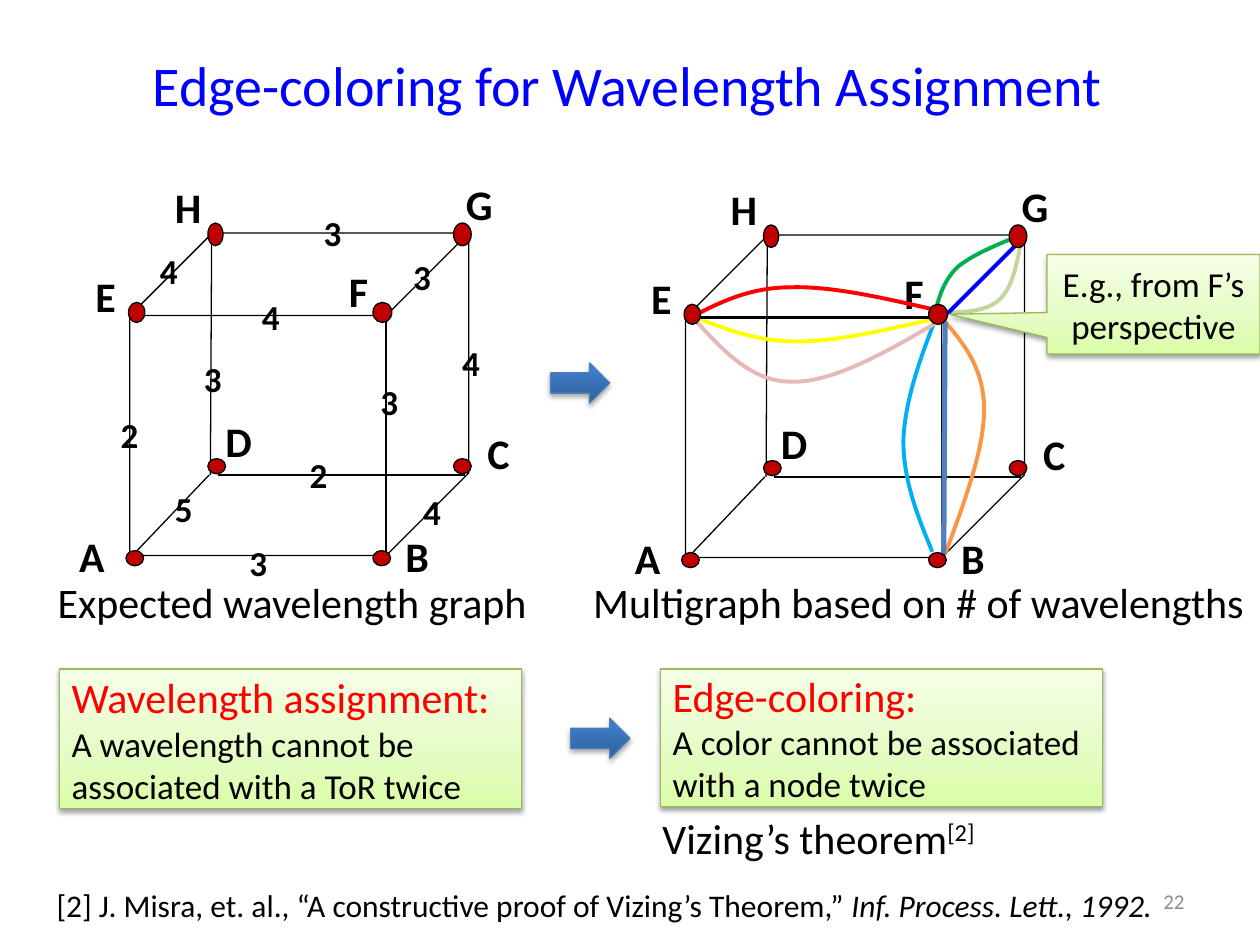
from copy import deepcopy
from dataclasses import dataclass
from itertools import pairwise

from lxml.etree import SubElement
from pptx import Presentation
from pptx.dml.color import RGBColor as RGB
from pptx.enum.shapes import MSO_CONNECTOR as Conn, MSO_SHAPE as Shape
from pptx.enum.text import MSO_ANCHOR as Anchor, PP_ALIGN as Align
from pptx.oxml.ns import qn
from pptx.util import Inches, Pt

COLS, ROWS = 100, 75
W, H = Inches(10), Inches(7.5)
FONT = "Calibri"
COLORS = {
    "black": "000000", "title": "0000FF", "gray": "8C8C8C", "node": "C00000",
    "red": "FF0000", "green": "00B050", "olive": "C3D69B", "cyan": "00B0F0",
    "orange": "F79646", "yellow": "FFFF00", "pink": "E6B9B8", "blue": "0000FF",
    "steel": "4F81BD", "box_line": "98B955", "arrow_line": "4B7EBC",
}


@dataclass(frozen=True)
class Node:
    name: str
    x: float
    y: float
    w: float
    h: float
    label_x: float
    label_y: float


@dataclass(frozen=True)
class Edge:
    color: str
    points: tuple
    width: float = 2.25


@dataclass(frozen=True)
class Style:
    stops: tuple
    line: str
    opacity: int
    distance: float


NODES = (
    Node("A", 10, 43.7, 1.4, 1.2, 5.3, 41.6),
    Node("B", 29.6, 43.7, 1.4, 1.2, 31.2, 41.6),
    Node("C", 36, 36.4, 1.4, 1.2, 37.7, 33.4),
    Node("D", 16.5, 36.4, 1.4, 1.2, 16.9, 32.5),
    Node("E", 10.2, 24, 1.3, 1.6, 6.6, 21),
    Node("F", 29.6, 24, 1.5, 1.6, 26.7, 20.6),
    Node("G", 36, 17.7, 1.4, 1.8, 36, 13.7),
    Node("H", 16.5, 17.7, 1.2, 1.8, 12.9, 13.9),
)
HIDDEN_EDGES = (
    Edge("black", ((16.8, 18.5), (16.7, 37.7)), 0.75),
    Edge("black", ((10.5, 44.1), (16.6, 37.7)), 0.75),
    Edge("black", ((17.3, 37.7), (36.9, 37.7)), 0.75),
)
WEIGHTS = (
    ("4", 19.8, 23), ("3", 29.2, 29.7), ("3", 31.8, 19.8), ("3", 18.8, 42.5),
    ("5", 12.9, 38.2), ("2", 8.6, 32.3), ("4", 32.6, 38.4), ("2", 23.6, 35.5),
    ("4", 35.7, 26.6), ("3", 15.2, 27.9), ("4", 11.7, 19.3), ("3", 24.7, 16.3),
)
MULTI_EDGES = (
    Edge("green", ((74.3, 24.5), (74.6, 23.3), (75, 22.2), (76, 21.2),
                   (77.1, 20.3), (78.9, 19.5), (80.7, 18.8))),
    Edge("olive", ((74.8, 24.8), (76.6, 24.8), (78.3, 24.7), (79.3, 23.8),
                   (80.3, 22.9), (80.7, 21.1), (81, 19.3))),
    Edge("cyan", ((74.3, 25.2), (73, 28.5), (71.8, 31.9), (71.7, 35),
                  (71.7, 38.1), (72.8, 40.9), (74, 43.8))),
    Edge("orange", ((74.7, 25.2), (76.4, 27.1), (78, 29.1), (78.1, 32.2),
                    (78.2, 35.4), (76.6, 39.7), (75, 44))),
    Edge("red", ((54.8, 25.2), (57.1, 24), (59.5, 22.8), (62.8, 22.8),
                 (66.1, 22.7), (70.4, 23.7), (74.7, 24.7))),
    Edge("yellow", ((55.2, 25.2), (57.6, 26.1), (60, 27.1), (63.3, 27.1),
                    (66.5, 27.1), (70.6, 26.1), (74.7, 25.2))),
    Edge("pink", ((54.8, 25), (57.2, 27.6), (59.5, 30.3), (62.8, 30.3),
                  (66, 30.4), (70.3, 28), (74.5, 25.5))),
    Edge("black", ((55.2, 25.2), (74.7, 25.2))),
    Edge("blue", ((80.7, 19.4), (75.2, 24.9))),
    Edge("steel", ((75, 25.5), (74.9, 44)), 3),
)
BOX = Style(((0, "DAFDA7"), (0.35, "E4FCC2"), (1, "F5FFE7")), "box_line", 38, 1.6)
ARROW = Style(((0, "2F5F99"), (0.8, "3D7CC7"), (1, "3A7CCB")), "arrow_line", 35, 1.8)


def col(n: float) -> int:
    return round(W * n / COLS)


def row(n: float) -> int:
    return round(H * n / ROWS)


def rgb(name: str) -> RGB:
    return RGB.from_string(COLORS[name])


def write(p, text: str, *, size=24, color="black", bold=False, italic=False, baseline=0) -> None:
    r = p.add_run()
    r.text = text
    f = r.font
    f.name, f.size, f.bold, f.italic = FONT, Pt(size), bold, italic
    f.color.rgb = rgb(color)
    if baseline:
        r._r.get_or_add_rPr().set("baseline", str(baseline * 1000))


def fill_text(sp, *paras: list, align=Align.LEFT, anchor=Anchor.TOP) -> None:
    tf = sp.text_frame
    tf.word_wrap = True
    tf.vertical_anchor = anchor
    for i, runs in enumerate(paras):
        p = tf.add_paragraph() if i else tf.paragraphs[0]
        p.alignment = align
        for text, fmt in runs:
            write(p, text, **fmt)


def text_box(s, x: float, y: float, w: float, h: float, *runs: tuple, **layout) -> None:
    sp = s.shapes.add_textbox(col(x), row(y), col(w), row(h))
    fill_text(sp, list(runs), **layout)


def outlined(s, kind, x: float, y: float, w: float, h: float, fill: str | None = None):
    sp = s.shapes.add_shape(kind, col(x), row(y), col(w), row(h))
    sp.shadow.inherit = False
    if fill:
        sp.fill.solid()
        sp.fill.fore_color.rgb = rgb(fill)
    else:
        sp.fill.background()
    sp.line.color.rgb = rgb("black")
    sp.line.width = Pt(0.75)
    return sp


def shaded(s, kind, x: float, y: float, w: float, h: float, style: Style):
    sp = outlined(s, kind, x, y, w, h)
    sp.line.color.rgb = rgb(style.line)
    sp.fill.gradient()
    sp.fill.gradient_angle = 90
    stop_list = sp._element.spPr.find(f".//{qn('a:gsLst')}")
    stop_list.append(deepcopy(stop_list[0]))
    for stop, (position, color) in zip(sp.fill.gradient_stops, style.stops):
        stop.position = position
        stop.color.rgb = RGB.from_string(color)
    effects = sp._element.spPr.find(qn("a:effectLst"))
    shadow = SubElement(effects, qn("a:outerShdw"), blurRad=str(Pt(3.1)),
                        dist=str(Pt(style.distance)), dir="5400000", rotWithShape="0")
    black = SubElement(shadow, qn("a:srgbClr"), val=COLORS["black"])
    SubElement(black, qn("a:alpha"), val=str(style.opacity * 1000))
    return sp


def draw_edge(s, edge: Edge, dx: float = 0, dy: float = 0) -> None:
    pts = [(col(x + dx), row(y + dy)) for x, y in edge.points]
    if len(pts) == 2:
        sp = s.shapes.add_connector(Conn.STRAIGHT, *pts[0], *pts[1])
        SubElement(sp._element.spPr, qn("a:effectLst"))
    else:
        builder = s.shapes.build_freeform(*pts[0])
        builder.add_line_segments(pts[1:], close=False)
        sp = builder.convert_to_shape()
        sp.shadow.inherit = False
        sp.fill.background()
        outline = sp._element.spPr.find(f".//{qn('a:path')}")
        segments = outline.findall(qn("a:lnTo"))
        for start, end in pairwise(range(0, len(segments) + 1, 3)):
            curve = SubElement(outline, qn("a:cubicBezTo"))
            for segment in segments[start:end]:
                curve.append(segment[0])
                outline.remove(segment)
    sp.line.color.rgb = rgb(edge.color)
    sp.line.width = Pt(edge.width)


def draw_graph(s, dx: float, dy: float, extra_edges: tuple = ()) -> None:
    cube = outlined(s, Shape.CUBE, 10.3 + dx, 18.5 + dy, 26.9, 25.6)
    cube.adjustments[0] = 0.256
    for edge in HIDDEN_EDGES:
        draw_edge(s, edge, dx, dy)
    for n in NODES:
        text_box(s, n.label_x + dx, n.label_y + dy, 3.7, 7.8, (n.name, dict(bold=True)))
    for edge in extra_edges:
        draw_edge(s, edge)
    for n in NODES:
        outlined(s, Shape.OVAL, n.x + dx, n.y + dy, n.w, n.h, "node")


def main() -> None:
    prs = Presentation()
    prs.slide_width, prs.slide_height = W, H
    s = prs.slides.add_slide(prs.slide_layouts[6])
    text_box(s, 1.2, 1.6, 97.2, 10.2,
             ("Edge-coloring for Wavelength Assignment", dict(size=32, color="title")),
             align=Align.CENTER, anchor=Anchor.MIDDLE)
    text_box(s, 71.7, 69.5, 23.3, 4, ("22", dict(size=12, color="gray")),
             align=Align.RIGHT, anchor=Anchor.MIDDLE)

    draw_graph(s, 0, 0)
    for value, x, y in WEIGHTS:
        text_box(s, x, y, 5.2, 4.4, (value, dict(size=20, bold=True)))
    draw_graph(s, 44.1, 0.15, MULTI_EDGES)
    text_box(s, 3.6, 45.3, 50.4, 5, ("Expected wavelength graph", {}))
    text_box(s, 46.1, 45.3, 54.7, 5, ("Multigraph based on # of wavelengths", {}))

    for x, w, h, heading, body in (
        (4.7, 36.7, 11.1, "Wavelength assignment:",
         "A wavelength cannot be associated with a ToR twice"),
        (52.4, 35.1, 10.9, "Edge-coloring:",
         "A color cannot be associated with a node twice"),
    ):
        sp = shaded(s, Shape.RECTANGLE, x, 53.1, w, h, BOX)
        fill_text(sp, [(heading, dict(color="red"))], [(body, dict(size=20))],
                  anchor=Anchor.MIDDLE)
    for x, y in ((43.7, 28.8), (45.3, 57)):
        shaded(s, Shape.RIGHT_ARROW, x, y, 4.7, 3.2, ARROW)
    callout = shaded(s, Shape.RECTANGULAR_CALLOUT, 83.1, 20.2, 16.9, 7.9, BOX)
    callout.adjustments[0], callout.adjustments[1] = -0.96, 0.1
    fill_text(callout, [("E.g., from F’s perspective", dict(size=20))],
              align=Align.CENTER, anchor=Anchor.MIDDLE)

    text_box(s, 51.6, 64, 28.3, 5, ("Vizing’s theorem", {}), ("[2]", dict(baseline=30)))
    text_box(s, 3.5, 69.8, 92.9, 4,
             ("[2] J. Misra, et. al., “A constructive proof of Vizing’s Theorem,” ", dict(size=18)),
             ("Inf. Process. Lett., 1992.", dict(size=18, italic=True)))
    prs.save("out.pptx")


if __name__ == "__main__":
    main()
